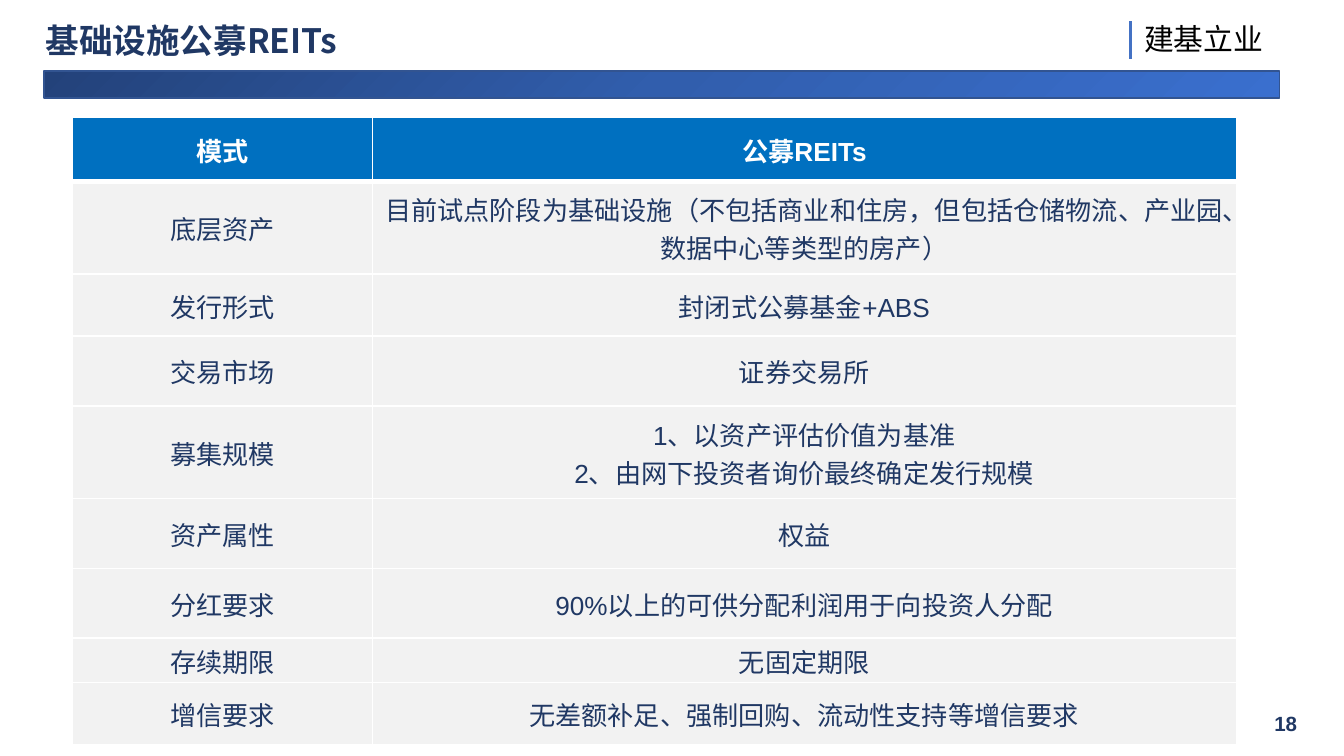
from copy import deepcopy

from lxml import etree
from pptx import Presentation
from pptx import util as u
from pptx.dml import color
from pptx.enum import shapes, text
from pptx.oxml import ns

PX = u.Inches(1) // 100
CJK = "Noto Sans CJK SC"
NAVY, WHITE = "203864", "FFFFFF"

COLUMNS = [223, 643]
ROWS = [
    (48, "模式", "公募REITs"),
    (69, "底层资产", "目前试点阶段为基础设施（不包括商业和住房，但包括仓储物流、产业园、数据中心等类型的房产）"),
    (46, "发行形式", "封闭式公募基金+ABS"),
    (52, "交易市场", "证券交易所"),
    (69, "募集规模", "1、以资产评估价值为基准\n2、由网下投资者询价最终确定发行规模"),
    (52, "资产属性", "权益"),
    (52, "分红要求", "90%以上的可供分配利润用于向投资人分配"),
    (33, "存续期限", "无固定期限"),
    (46, "增信要求", "无差额补足、强制回购、流动性支持等增信要求"),
]


def px(*lengths):
    """Turn px lengths into EMU."""
    return [u.Emu(length * PX) for length in lengths]


def rgb(value):
    """Turn a hex string into a colour."""
    return color.RGBColor.from_string(value)


def style(paragraph, size, ink, latin, bold=False, align=text.PP_ALIGN.LEFT):
    """Set the alignment and font of a paragraph."""
    paragraph.alignment = align
    font = paragraph.font
    font.size, font.bold, font.name = u.Pt(size), bold, latin
    font.color.rgb = rgb(ink)
    defaults = paragraph._p.pPr.find(ns.qn("a:defRPr"))
    etree.SubElement(defaults, ns.qn("a:ea"), typeface=CJK)


def write_line(shape, wording, size, ink, latin, margin=10, **options):
    """Write one line of text, centred vertically in the shape."""
    frame = shape.text_frame
    frame.word_wrap = True
    frame.vertical_anchor = text.MSO_ANCHOR.MIDDLE
    frame.margin_left, frame.margin_right = px(margin, margin)
    frame.margin_top, frame.margin_bottom = px(4, 4)
    frame.text = wording
    paragraph = frame.paragraphs[0]
    style(paragraph, size, ink, latin, **options)
    return paragraph


def add_title(slide, box):
    """Place the slide title."""
    shape = slide.shapes.add_textbox(*px(*box))
    paragraph = write_line(shape, "基础设施公募REITs", 18, NAVY, CJK, bold=True)
    paragraph.line_spacing = 0.9


def add_page_number(slide, box):
    """Place the page number, aligned right."""
    shape = slide.shapes.add_textbox(*px(*box))
    write_line(shape, "18", 11, NAVY, "Arial", bold=True, align=text.PP_ALIGN.RIGHT)


def add_bar(slide, box):
    """Draw the gradient bar below the title."""
    shape = slide.shapes.add_shape(shapes.MSO_SHAPE.RECTANGLE, *px(*box))
    shape.shadow.inherit = False
    shape.line.color.rgb = rgb("325491")
    shape.line.width = u.Pt(1)
    shape.fill.gradient()
    shape.fill.gradient_angle = 315
    stop_list = shape._element.spPr.find(".//" + ns.qn("a:gsLst"))
    stop_list.insert(1, deepcopy(stop_list[0]))
    stops = zip(shape.fill.gradient_stops, (0, 0.5, 1), ("23427A", "315EAD", "3A6FCE"))
    for stop, position, shade in stops:
        stop.position = position
        stop.color.rgb = rgb(shade)


def add_motto(slide, box):
    """Place the motto with the rule to its left."""
    left, top, width, height = box
    shape = slide.shapes.add_shape(
        shapes.MSO_SHAPE.SNIP_2_DIAG_RECTANGLE, *px(left + 2, top, width - 2, height))
    shape.shadow.inherit = False
    shape.adjustments[0], shape.adjustments[1] = 0, 0.26
    shape.fill.solid()
    shape.fill.fore_color.rgb = rgb(WHITE)
    shape.line.fill.background()
    write_line(shape, "建基立业", 16, "000000", CJK, margin=4)
    rule = slide.shapes.add_connector(
        shapes.MSO_CONNECTOR.STRAIGHT, *px(left, top + 4, left, top + height - 1))
    rule.line.color.rgb = rgb("4472C4")
    rule.line.width = u.Pt(1.5)
    etree.SubElement(rule._element.spPr, ns.qn("a:effectLst"))


def add_border(cell, side, width):
    """Draw a white border on one side of a cell."""
    line = etree.SubElement(
        cell._tc.get_or_add_tcPr(), ns.qn("a:ln" + side), w=str(u.Pt(width)))
    fill = etree.SubElement(line, ns.qn("a:solidFill"))
    etree.SubElement(fill, ns.qn("a:srgbClr"), val=WHITE)


def fill_cell(cell, wording, row, column):
    """Write and format one table cell."""
    header = row == 0
    widths = {"L": 1, "R": 1, "T": 3 if row == 1 else 1, "B": 3 if header else 1}
    for side, width in widths.items():
        add_border(cell, side, width)
    cell.fill.solid()
    cell.fill.fore_color.rgb = rgb("0070C0" if header else "F2F2F2")
    cell.vertical_anchor = text.MSO_ANCHOR.MIDDLE
    side_margin = 8 if column and not header else 2
    cell.margin_left, cell.margin_right = px(side_margin, side_margin)
    cell.margin_top, cell.margin_bottom = px(1, 0)
    cell.text = wording
    for paragraph in cell.text_frame.paragraphs:
        style(paragraph, 14, WHITE if header else NAVY, "Arial", header, text.PP_ALIGN.CENTER)


def add_features(slide, left, top):
    """Build the table of fund features."""
    box = px(left, top, sum(COLUMNS), sum(row[0] for row in ROWS))
    table = slide.shapes.add_table(len(ROWS), len(COLUMNS), *box).table
    table.horz_banding = False
    for column, width in zip(table.columns, px(*COLUMNS)):
        column.width = width
    for row, (height, *wordings) in enumerate(ROWS):
        table.rows[row].height = px(height)[0]
        for column, wording in enumerate(wordings):
            fill_cell(table.cell(row, column), wording, row, column)


def main():
    """Build and save the presentation."""
    presentation = Presentation()
    presentation.slide_width = px(1000)[0]
    presentation.slide_height = presentation.slide_width * 9 // 16
    slide = presentation.slides.add_slide(presentation.slide_layouts[6])
    add_bar(slide, (33, 53, 919, 20))
    add_motto(slide, (841, 12, 137, 33))
    add_title(slide, (24, 15, 643, 33))
    add_page_number(slide, (750, 523, 225, 30))
    add_features(slide, 54, 87)
    presentation.save("out.pptx")


if __name__ == "__main__":
    main()
